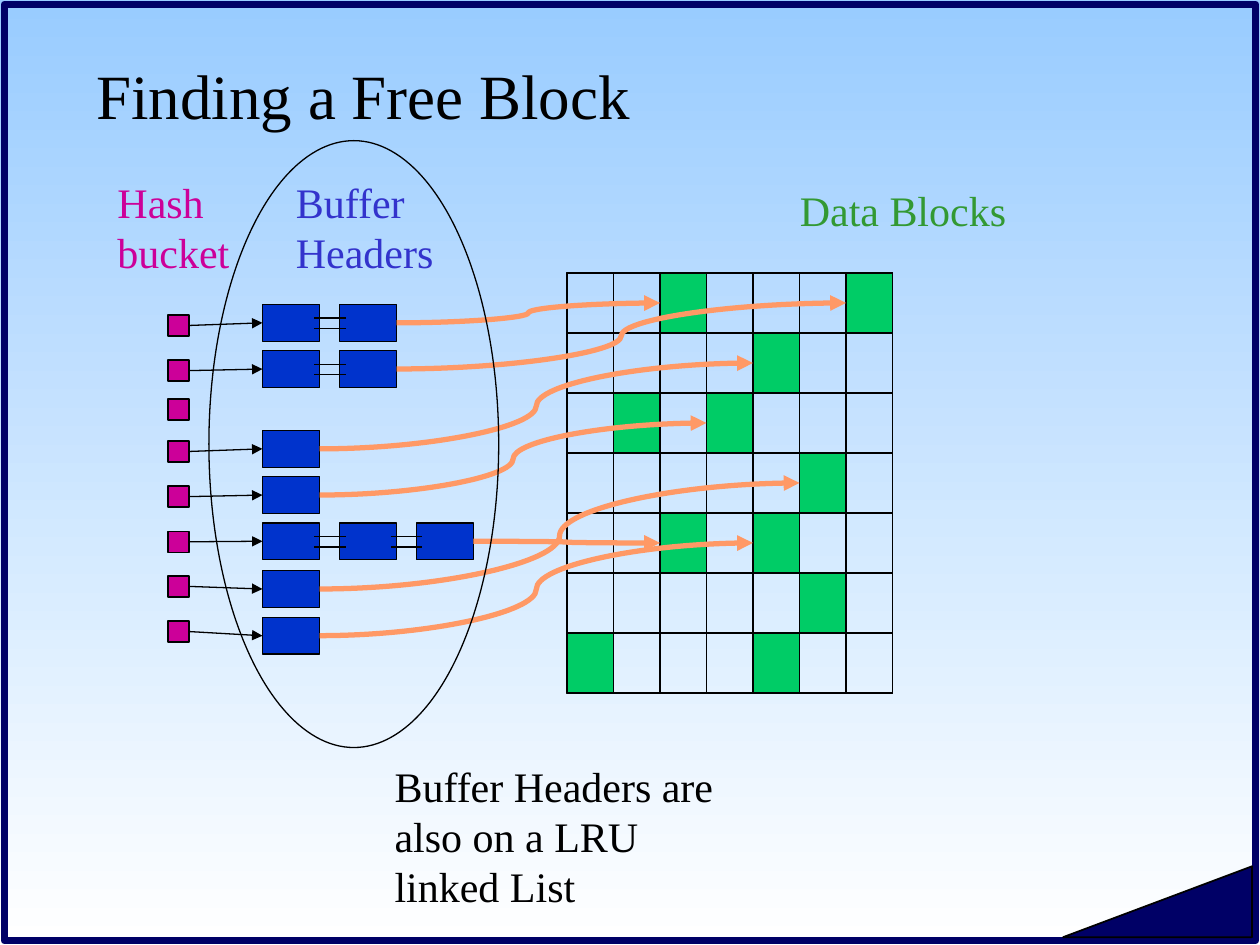
"""Build the slide on finding a free block through hash buckets and buffer headers."""
from dataclasses import dataclass

from lxml.etree import SubElement
from pptx import Presentation
from pptx.dml.color import RGBColor
from pptx.enum.shapes import MSO_CONNECTOR as Connector, MSO_SHAPE as Shape
from pptx.enum.text import MSO_ANCHOR as Anchor
from pptx.oxml.ns import qn
from pptx.util import Inches, Pt


@dataclass(frozen=True)
class Theme:
    font: str = "Times New Roman"
    title_size: int = 36
    body_size: int = 24
    hairline: float = 0.75
    curve_width: float = 3
    border_width: float = 4
    black: str = "000000"
    sky: str = "99CCFF"
    white: str = "FFFFFF"
    navy: str = "000066"
    bucket: str = "CC0099"
    header: str = "0033CC"
    header_text: str = "3333CC"
    block: str = "00CC66"
    block_text: str = "339933"
    curve: str = "FF9966"


class SlideBuilder:
    """Draw styled elements on a slide divided into 120 columns and 90 rows."""

    def __init__(self, presentation, theme):
        self.theme = theme
        self.column = presentation.slide_width / 120
        self.row = presentation.slide_height / 90
        self.slide = presentation.slides.add_slide(presentation.slide_layouts[6])

    def place(self, *lengths):
        units = (self.column, self.row) * 2
        return [round(length * unit) for length, unit in zip(lengths, units)]

    def background(self, top, bottom):
        fill = self.slide.background.fill
        fill.gradient()
        fill.gradient_angle = 270
        for stop, color in zip(fill.gradient_stops, (top, bottom)):
            stop.color.rgb = RGBColor.from_string(color)

    def box(self, box, fill=None, line=None, width=None, kind=Shape.RECTANGLE):
        shape = self.slide.shapes.add_shape(kind, *self.place(*box))
        shape.shadow.inherit = False
        if fill:
            shape.fill.solid()
            shape.fill.fore_color.rgb = RGBColor.from_string(fill)
        else:
            shape.fill.background()
        shape.line.color.rgb = RGBColor.from_string(line or self.theme.black)
        shape.line.width = Pt(width or self.theme.hairline)
        return shape

    def text(self, box, lines, color=None, size=None, wrap=False, anchor=Anchor.TOP):
        frame = self.slide.shapes.add_textbox(*self.place(*box)).text_frame
        frame.word_wrap = wrap
        frame.vertical_anchor = anchor
        frame.text = "\n".join(lines)
        for paragraph in frame.paragraphs:
            paragraph.font.name = self.theme.font
            paragraph.font.size = Pt(size or self.theme.body_size)
            paragraph.font.color.rgb = RGBColor.from_string(color or self.theme.black)

    def line(self, ends=(0, 0, 0, 0), kind=Connector.STRAIGHT, color=None, width=None):
        connector = self.slide.shapes.add_connector(kind, *self.place(*ends))
        connector.line.color.rgb = RGBColor.from_string(color or self.theme.black)
        connector.line.width = Pt(width or self.theme.hairline)
        SubElement(connector._element.spPr, qn("a:effectLst"))
        return connector

    def arrow(self, source, target, **style):
        connector = self.line(**style)
        connector.begin_connect(source, 3)
        connector.end_connect(target, 1)
        SubElement(connector.line._get_or_add_ln(), qn("a:tailEnd"), type="triangle")

    def block_grid(self, left, top, width, height, count, used):
        cell_width, cell_height = width / count, height / count
        for index in range(count):
            self.box((left, top + index * cell_height, width, cell_height))
        for index in range(count):
            self.box((left + index * cell_width, top, cell_width, height))
        return {
            (row, column): self.box(
                (left + column * cell_width, top + row * cell_height, cell_width, cell_height),
                self.theme.block,
            )
            for row, column in used
        }

    def header_chain(self, top, count):
        left, pitch, width, height = 25, 7.32, 5.45, 3.5
        headers = [
            self.box((left + index * pitch, top, width, height), self.theme.header)
            for index in range(count)
        ]
        for index in range(1, count):
            right = left + index * pitch + 0.6
            for y in (top + 1.3, top + 2.3):
                self.line((right - 3, y, right, y))
        return headers


def main():
    presentation = Presentation()
    presentation.slide_width, presentation.slide_height = Inches(10), Inches(7.5)
    theme = Theme()
    builder = SlideBuilder(presentation, theme)

    builder.background(theme.sky, theme.white)
    builder.box((0.4, 0.4, 119.2, 89.2), line=theme.navy, width=theme.border_width)
    corner = builder.box((101.25, 82.5, 18, 6.75), theme.navy, width=1,
                         kind=Shape.ISOSCELES_TRIANGLE)
    corner.adjustments[0] = 1
    builder.text((8, 3, 102, 12), ["Finding a Free Block"], size=theme.title_size,
                 wrap=True, anchor=Anchor.MIDDLE)
    builder.text((27, 16.2, 15.5, 10.8), ["Buffer", "Headers"], theme.header_text)
    builder.text((75, 17, 22.1, 6), ["Data Blocks"], theme.block_text)
    builder.text((10, 16.2, 13.1, 10.8), ["Hash", "bucket"], theme.bucket)

    used = [(0, 2), (0, 6), (1, 4), (2, 1), (2, 3), (3, 5),
            (4, 2), (4, 4), (5, 5), (6, 0), (6, 4)]
    blocks = builder.block_grid(54, 26, 31, 40, 7, used)

    rows = [
        (30, 29, 2, (0, 2)),
        (34.3, 33.4, 2, (0, 6)),
        (38, None, 0, None),
        (42, 41, 1, (1, 4)),
        (46.3, 45.4, 1, (2, 3)),
        (50.6, 49.8, 3, (4, 2)),
        (54.85, 54.35, 1, (3, 5)),
        (59.15, 58.8, 1, (4, 4)),
    ]
    for bucket_top, chain_top, count, target in rows:
        bucket = builder.box((16, bucket_top, 2, 2), theme.bucket)
        if count:
            headers = builder.header_chain(chain_top, count)
            builder.arrow(bucket, headers[0])
            builder.arrow(headers[-1], blocks[target], kind=Connector.CURVE,
                          color=theme.curve, width=theme.curve_width)

    builder.box((19.9, 13.4, 27.6, 57.8), kind=Shape.OVAL)
    builder.text((36.4, 71.8, 33.6, 15.6),
                 ["Buffer Headers are also on a LRU linked List"], wrap=True)
    presentation.save("out.pptx")


if __name__ == "__main__":
    main()
